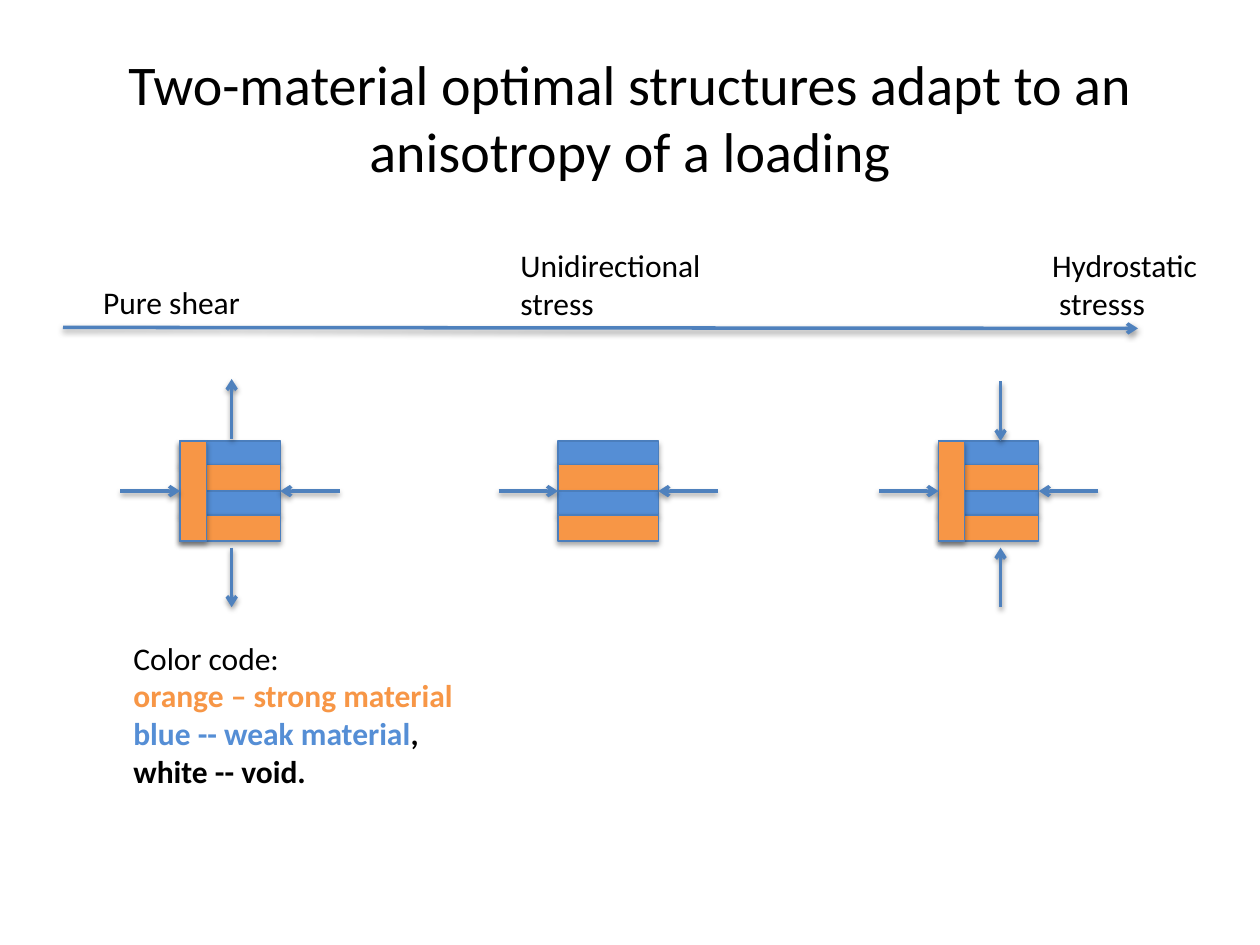
"""Build a slide on how two-material optimal structures adapt to anisotropic loading."""
from lxml.etree import SubElement
from pptx import Presentation
from pptx.dml.color import RGBColor
from pptx.enum.shapes import MSO_CONNECTOR, MSO_SHAPE
from pptx.enum.text import MSO_ANCHOR, PP_ALIGN
from pptx.oxml.ns import qn
from pptx.util import Cm, Pt

COLORS = {
    "text": "000000",
    "strong": "F79646",
    "weak": "558ED5",
    "outline": "4B7EBC",
    "arrow": "4F81BD",
    "shadow": "000000",
}
WEAK_HEIGHT, STRONG_HEIGHT = 0.48, 0.53
SIDE = 2 * (WEAK_HEIGHT + STRONG_HEIGHT)
BLOCK_TOP = 8.89
BLOCK_MIDDLE = BLOCK_TOP + SIDE / 2
ARROW_LENGTH = 1.2


class LoadingSlide:
    """Slide style with one method for each kind of element."""

    font = "Calibri"

    def __init__(self, slide):
        self.slide = slide

    def color(self, name):
        return RGBColor.from_string(COLORS[name])

    def style(self, run, size, color="text", bold=False):
        run.font.name = self.font
        run.font.size = Pt(size)
        run.font.bold = bold
        run.font.color.rgb = self.color(color)

    def shade(self, item, opacity, distance):
        effects = SubElement(item._element.spPr, qn("a:effectLst"))
        shadow = SubElement(effects, qn("a:outerShdw"), blurRad=str(Pt(3.1)),
                            dist=str(Pt(distance)), dir="5400000", rotWithShape="0")
        tint = SubElement(shadow, qn("a:srgbClr"), val=COLORS["shadow"])
        SubElement(tint, qn("a:alpha"), val=str(opacity * 1000))

    def title(self, wording, left, top, width, height):
        heading = self.slide.shapes.title
        heading.left, heading.top = Cm(left), Cm(top)
        heading.width, heading.height = Cm(width), Cm(height)
        heading.text_frame.text = wording
        heading.text_frame.vertical_anchor = MSO_ANCHOR.MIDDLE
        paragraph = heading.text_frame.paragraphs[0]
        paragraph.alignment = PP_ALIGN.CENTER
        self.style(paragraph.runs[0], 32)

    def label(self, lines, left, top, width, height, wrap=False):
        frame = self.slide.shapes.add_textbox(
            Cm(left), Cm(top), Cm(width), Cm(height)).text_frame
        frame.word_wrap = wrap
        frame.text = "\n".join(lines)
        for paragraph in frame.paragraphs:
            self.style(paragraph.runs[0], 18)
        return frame.paragraphs

    def layer(self, block, material, left, top, width, height):
        layer = block.shapes.add_shape(
            MSO_SHAPE.RECTANGLE, Cm(left), Cm(top), Cm(width), Cm(height))
        layer.fill.solid()
        layer.fill.fore_color.rgb = self.color(material)
        layer.line.color.rgb = self.color("outline")
        layer.line.width = Pt(0.75)
        self.shade(layer, 35, 1.8)

    def block(self, left, has_wall):
        block = self.slide.shapes.add_group_shape()
        top = BLOCK_TOP
        for material, height in [("weak", WEAK_HEIGHT), ("strong", STRONG_HEIGHT)] * 2:
            self.layer(block, material, left, top, SIDE, height)
            top += height
        if has_wall:
            self.layer(block, "strong", left, BLOCK_TOP, STRONG_HEIGHT, SIDE)

    def arrow(self, start, end):
        arrow = self.slide.shapes.add_connector(
            MSO_CONNECTOR.STRAIGHT, *map(Cm, start), *map(Cm, end))
        arrow.line.color.rgb = self.color("arrow")
        arrow.line.width = Pt(2)
        SubElement(arrow.line._ln, qn("a:tailEnd"), type="arrow")
        self.shade(arrow, 38, 1.6)

    def compression(self, left):
        for edge, outward in [(left, -1), (left + SIDE, 1)]:
            self.arrow((edge + outward * ARROW_LENGTH, BLOCK_MIDDLE), (edge, BLOCK_MIDDLE))

    def vertical_load(self, x, upper_gap, pulls):
        upper = BLOCK_TOP - upper_gap
        lower = BLOCK_TOP + SIDE + 0.13
        for near, outward in [(upper, -1), (lower, 1)]:
            ends = [(x, near + outward * ARROW_LENGTH), (x, near)]
            self.arrow(*(reversed(ends) if pulls else ends))

    def legend(self, left, top, width, height):
        heading, strong, weak, void = self.label(
            ["Color code:", "orange – strong material", "blue -- weak material",
             "white -- void."], left, top, width, height)
        self.style(strong.runs[0], 18, "strong", bold=True)
        self.style(weak.runs[0], 18, "weak", bold=True)
        comma = weak.add_run()
        comma.text = ","
        for run in (comma, void.runs[0]):
            self.style(run, 18, bold=True)


def main():
    deck = Presentation()
    deck.slide_width, deck.slide_height = Cm(25.4), Cm(19.05)
    page = LoadingSlide(deck.slides.add_slide(deck.slide_layouts[5]))
    page.title("Two-material optimal structures adapt to an anisotropy of a loading",
               1.27, 0.76, 22.86, 3.18)

    shear, unidirectional, hydrostatic = 3.63, 11.25, 18.92
    for left, has_wall in [(unidirectional, False), (shear, True), (hydrostatic, True)]:
        page.block(left, has_wall)

    page.label(["Hydrostatic", " stresss"], 20.96, 4.83, 3.48, 1.8)
    page.label(["Unidirectional", "stress"], 10.24, 4.83, 4.19, 1.8, wrap=True)
    page.label(["Pure shear"], 1.83, 5.59, 3.3, 1.02)
    page.arrow((1.27, 6.6), (22.94, 6.62))
    page.legend(2.44, 12.75, 7.01, 3.33)

    for left in (shear, unidirectional, hydrostatic):
        page.compression(left)
    page.vertical_load(shear + 1.04, 0.05, pulls=True)
    page.vertical_load(hydrostatic + 1.25, 0, pulls=False)
    deck.save("out.pptx")


if __name__ == "__main__":
    main()
